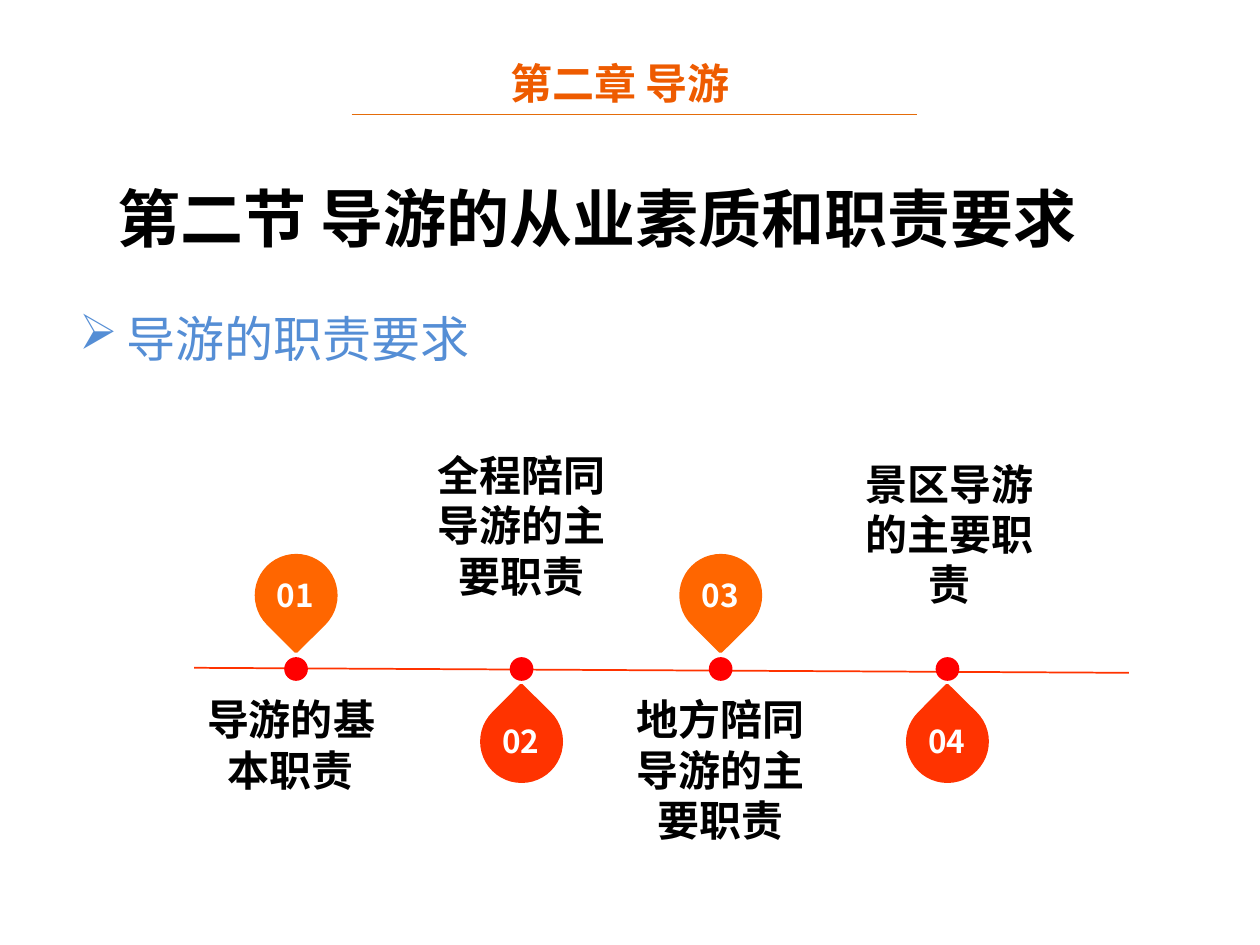
from dataclasses import dataclass
from typing import Any

import pptx
import pptx.dml.color
import pptx.enum.shapes
import pptx.enum.text
import pptx.oxml.ns
import pptx.util
from lxml import etree
from pptx.util import Inches

Align = pptx.enum.text.PP_ALIGN
Shape = pptx.enum.shapes.MSO_SHAPE


@dataclass(frozen=True)
class Theme:
    body_font: str = "Calibri"
    heading_font: str = "Noto Sans CJK SC"
    chapter: str = "EE5B00"
    rule: str = "E46C0A"
    topic: str = "558ED5"
    ink: str = "000000"
    white: str = "FFFFFF"
    upper_pin: str = "FF6600"
    lower_pin: str = "FF3300"
    dot: str = "FF0000"
    title_size: int = 36
    topic_size: int = 28
    text_size: int = 24
    number_size: int = 18


@dataclass(frozen=True)
class Stop:
    number: str
    label: str
    center: float
    label_center: float
    label_top: float
    label_height: float
    pin_above: bool


THEME = Theme()
STOPS = [
    Stop("01", "导游的基本职责", 2.35, 2.31, 5.45, 0.91, True),
    Stop("02", "全程陪同导游的主要职责", 4.14, 4.14, 3.51, 1.31, False),
    Stop("03", "地方陪同导游的主要职责", 5.72, 5.72, 5.45, 1.31, True),
    Stop("04", "景区导游的主要职责", 7.52, 7.54, 3.58, 1.31, False),
]
PIN_SIZE = 0.63
DOT_SIZE = 0.16
DOT_TOP = 5.23
LABEL_WIDTH = 1.86


def rgb(color: str) -> pptx.dml.color.RGBColor:
    return pptx.dml.color.RGBColor.from_string(color)


def add_bullet(para: Any, mark: str, indent: float) -> None:
    properties = para._p.get_or_add_pPr()
    properties.set("marL", str(Inches(indent)))
    properties.set("indent", str(-Inches(indent)))
    bullet = etree.SubElement(properties, pptx.oxml.ns.qn("a:buChar"))
    bullet.set("char", mark)


def write_text(box: Any, text: str, size: int, color: str, font: str,
               bold: bool = True, align: Any = Align.LEFT, bullet: str = "") -> None:
    frame = box.text_frame
    frame.word_wrap = True
    frame.auto_size = pptx.enum.text.MSO_AUTO_SIZE.NONE
    frame.vertical_anchor = pptx.enum.text.MSO_ANCHOR.MIDDLE
    para = frame.paragraphs[0]
    para.alignment = align
    if bullet:
        add_bullet(para, bullet, 0.38)
    span = para.add_run()
    span.text = text
    span.font.size = pptx.util.Pt(size)
    span.font.bold = bold
    span.font.color.rgb = rgb(color)
    span.font.name = font
    east_asian = etree.SubElement(span.font._element, pptx.oxml.ns.qn("a:ea"))
    east_asian.set("typeface", font)


def add_text(shapes: Any, left: float, top: float, width: float, height: float,
             text: str, size: int, color: str, font: str, **options: Any) -> None:
    box = shapes.add_textbox(Inches(left), Inches(top), Inches(width), Inches(height))
    write_text(box, text, size, color, font, **options)


def add_line(shapes: Any, start: tuple[float, float], end: tuple[float, float],
             color: str, width: float) -> None:
    line = shapes.add_connector(
        pptx.enum.shapes.MSO_CONNECTOR.STRAIGHT, *map(Inches, start + end))
    line.line.color.rgb = rgb(color)
    line.line.width = pptx.util.Pt(width)
    etree.SubElement(line._element.spPr, pptx.oxml.ns.qn("a:effectLst"))


def add_marker(shapes: Any, kind: Any, center: float, top: float, size: float,
               color: str, rotation: float = 0) -> None:
    marker = shapes.add_shape(kind, Inches(center - size / 2), Inches(top),
                              Inches(size), Inches(size))
    marker.rotation = rotation
    marker.shadow.inherit = False
    marker.fill.solid()
    marker.fill.fore_color.rgb = rgb(color)
    marker.line.color.rgb = rgb(color)
    marker.line.width = pptx.util.Pt(2)


def add_stop(shapes: Any, stop: Stop) -> None:
    """Draw one timeline stop: numbered pin, dot on the line, and label opposite."""
    if stop.pin_above:
        pin_top, color, rotation = 4.41, THEME.upper_pin, 135.2
    else:
        pin_top, color, rotation = 5.57, THEME.lower_pin, 314.7
    add_marker(shapes, Shape.TEAR, stop.center, pin_top, PIN_SIZE, color, rotation)
    add_marker(shapes, Shape.OVAL, stop.center, DOT_TOP, DOT_SIZE, THEME.dot)
    add_text(shapes, stop.center - 0.28, pin_top + 0.11, 0.55, 0.4, stop.number,
             THEME.number_size, THEME.white, THEME.heading_font, align=Align.CENTER)
    add_text(shapes, stop.label_center - LABEL_WIDTH / 2, stop.label_top, LABEL_WIDTH,
             stop.label_height, stop.label, THEME.text_size, THEME.ink,
             THEME.body_font, align=Align.CENTER)


def main() -> None:
    deck = pptx.Presentation()
    deck.slide_width, deck.slide_height = Inches(10), Inches(7.5)
    page = deck.slides.add_slide(deck.slide_layouts[5])

    add_line(page.shapes, (2.79, 0.91), (7.28, 0.91), THEME.rule, 0.75)
    add_text(page.shapes, 3.95, 0.41, 3.54, 0.5, "第二章 导游",
             THEME.text_size, THEME.chapter, THEME.body_font)

    title = page.shapes.title
    title.left, title.top = Inches(0.83), Inches(1.37)
    title.width, title.height = Inches(8.35), Inches(0.71)
    write_text(title, "第二节 导游的从业素质和职责要求",
               THEME.title_size, THEME.ink, THEME.heading_font)

    add_text(page.shapes, 0.53, 2.4, 4.07, 0.57, "导游的职责要求", THEME.topic_size,
             THEME.topic, THEME.body_font, bold=False, bullet="➢")

    timeline = page.shapes.add_group_shape().shapes
    add_line(timeline, (1.54, 5.3), (8.96, 5.34), THEME.lower_pin, 1)
    for stop in STOPS:
        add_stop(timeline, stop)

    deck.save("out.pptx")


if __name__ == "__main__":
    main()
